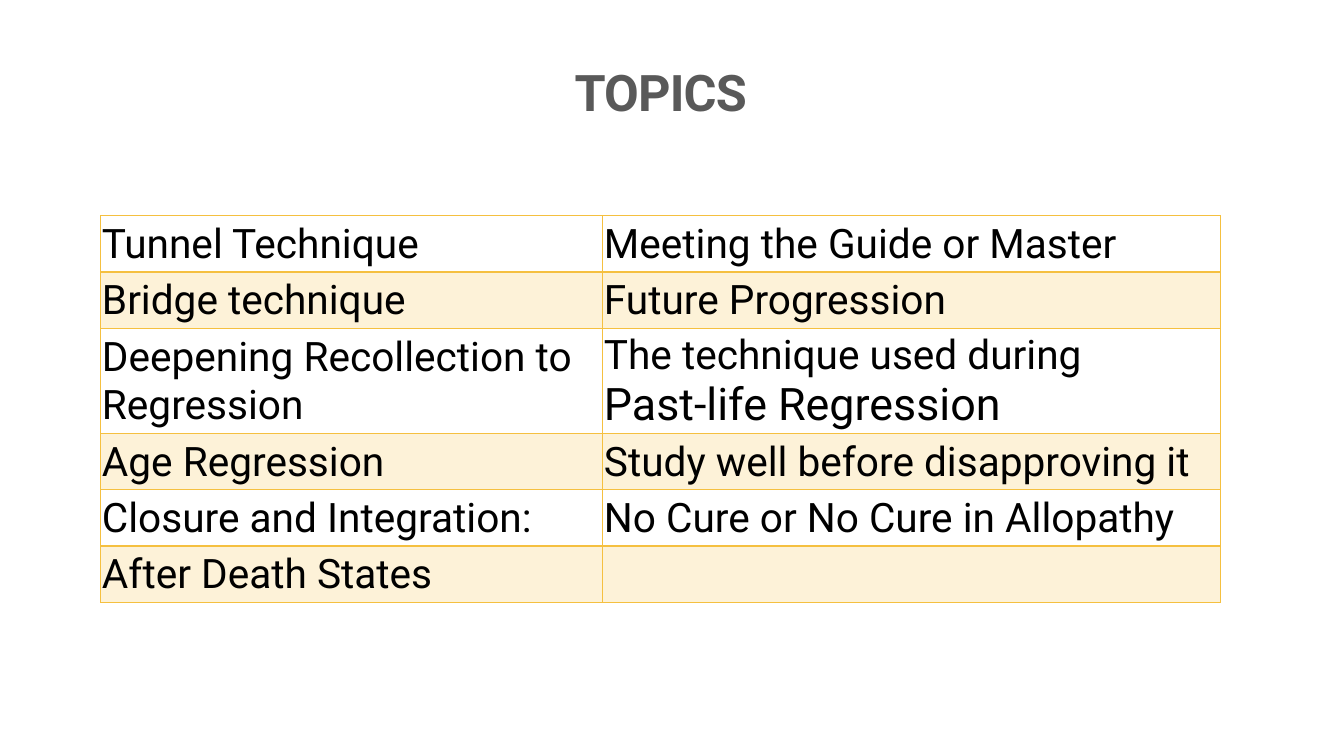
"""Build the TOPICS slide: a centred title above a two-column banded table."""
from dataclasses import dataclass

from lxml.etree import SubElement
from pptx import Presentation
from pptx.dml.color import RGBColor
from pptx.enum.text import MSO_ANCHOR as Anchor, MSO_AUTO_SIZE as AutoSize, PP_ALIGN as Align
from pptx.oxml.ns import qn
from pptx.slide import Slide
from pptx.table import _Cell as Cell
from pptx.text.text import _Paragraph as Paragraph, _Run as Run
from pptx.util import Cm, Pt

GOLD = RGBColor(0xF5, 0xC0, 0x40)
GREY = RGBColor(0x59, 0x59, 0x59)
BLACK = RGBColor(0x00, 0x00, 0x00)

FONT = "Roboto"
LEFT, WIDTH = Cm(2.54), Cm(28.22)
TABLE_TOP = Cm(5.44)
COLUMN_WIDTHS = (Cm(12.65), Cm(15.57))
LINE_HEIGHT, TALL_HEIGHT = Cm(1.42), Cm(2.64)
BAND_ALPHA = 20000

CELL_FORMAT = {
    "vertical_anchor": Anchor.MIDDLE,
    "margin_left": Cm(0.03),
    "margin_right": Cm(0.03),
    "margin_top": Cm(0.03),
    "margin_bottom": Cm(0),
}
TITLE_FRAME_FORMAT = {
    "vertical_anchor": Anchor.BOTTOM,
    "word_wrap": True,
    "auto_size": AutoSize.NONE,
}


@dataclass(frozen=True)
class Line:
    """One paragraph of a table cell."""
    text: str
    size: float = 29


@dataclass(frozen=True)
class TopicRow:
    """The topics that share one table row."""
    left: tuple[Line, ...]
    right: tuple[Line, ...] = ()
    height: int = LINE_HEIGHT


TOPICS = (
    TopicRow((Line("Tunnel Technique"),), (Line("Meeting the Guide or Master"),)),
    TopicRow((Line("Bridge technique"),), (Line("Future Progression"),)),
    TopicRow(
        (Line("Deepening Recollection to Regression"),),
        (Line("The technique used during"), Line("Past-life Regression", 32)),
        TALL_HEIGHT,
    ),
    TopicRow((Line("Age Regression"),), (Line("Study well before disapproving it"),)),
    TopicRow((Line("Closure and Integration:"),), (Line("No Cure or No Cure in Allopathy"),)),
    TopicRow((Line("After Death States"),)),
)


def apply(target: object, values: dict) -> None:
    """Set each named attribute of the target."""
    for name, value in values.items():
        setattr(target, name, value)


def add_span(para: Paragraph, text: str, size: float, color: RGBColor, bold: bool = False) -> Run:
    """Add one formatted run to a paragraph."""
    span = para.add_run()
    span.text = text
    apply(span.font, {"name": FONT, "size": Pt(size), "bold": bold})
    span.font.color.rgb = color
    return span


def add_title(page: Slide, text: str) -> None:
    """Place and format the title placeholder."""
    title = page.shapes.title
    apply(title, {"left": LEFT, "top": Cm(0), "width": WIDTH, "height": Cm(3.18)})
    apply(title.text_frame, TITLE_FRAME_FORMAT)
    para = title.text_frame.paragraphs[0]
    para.alignment = Align.CENTER
    span = add_span(para, text, 36, GREY, bold=True)
    span.font._element.set("spc", "-60")


def add_borders(cell: Cell, bottom: float) -> None:
    """Draw gold lines on the four sides of a cell."""
    properties = cell._tc.get_or_add_tcPr()
    for side, width in {"lnL": 1, "lnR": 1, "lnT": 1, "lnB": bottom}.items():
        line = SubElement(properties, qn(f"a:{side}"), w=str(Pt(width)))
        fill = SubElement(line, qn("a:solidFill"))
        SubElement(fill, qn("a:srgbClr"), val=str(GOLD))


def fill_cell(cell: Cell, banded: bool) -> None:
    """Tint a banded cell and leave any other clear."""
    if not banded:
        cell.fill.background()
        return
    cell.fill.solid()
    cell.fill.fore_color.rgb = GOLD
    color = cell._tc.tcPr.find(qn("a:solidFill")).find(qn("a:srgbClr"))
    SubElement(color, qn("a:alpha"), val=str(BAND_ALPHA))


def write_cell(cell: Cell, lines: tuple[Line, ...]) -> None:
    """Write one paragraph for each line."""
    apply(cell, CELL_FORMAT)
    frame = cell.text_frame
    for index, line in enumerate(lines):
        para = frame.add_paragraph() if index else frame.paragraphs[0]
        add_span(para, line.text, line.size, BLACK)


def add_topics(page: Slide, topics: tuple[TopicRow, ...]) -> None:
    """Add the table of topics."""
    height = sum(topic.height for topic in topics)
    table = page.shapes.add_table(
        len(topics), len(COLUMN_WIDTHS), LEFT, TABLE_TOP, WIDTH, height
    ).table
    apply(table, {"first_row": False, "horz_banding": False})
    for column, width in zip(table.columns, COLUMN_WIDTHS):
        column.width = width
    for index, (row, topic) in enumerate(zip(table.rows, topics)):
        row.height = topic.height
        for cell, lines in zip(row.cells, (topic.left, topic.right)):
            write_cell(cell, lines)
            add_borders(cell, bottom=1 if index else 2)
            fill_cell(cell, banded=index % 2 == 1)


def main() -> None:
    """Create and save the deck."""
    deck = Presentation()
    apply(deck, {"slide_width": Cm(33.87), "slide_height": Cm(19.05)})
    page = deck.slides.add_slide(deck.slide_layouts.get_by_name("Title Only"))
    add_title(page, "TOPICS")
    add_topics(page, TOPICS)
    deck.save("out.pptx")


if __name__ == "__main__":
    main()
